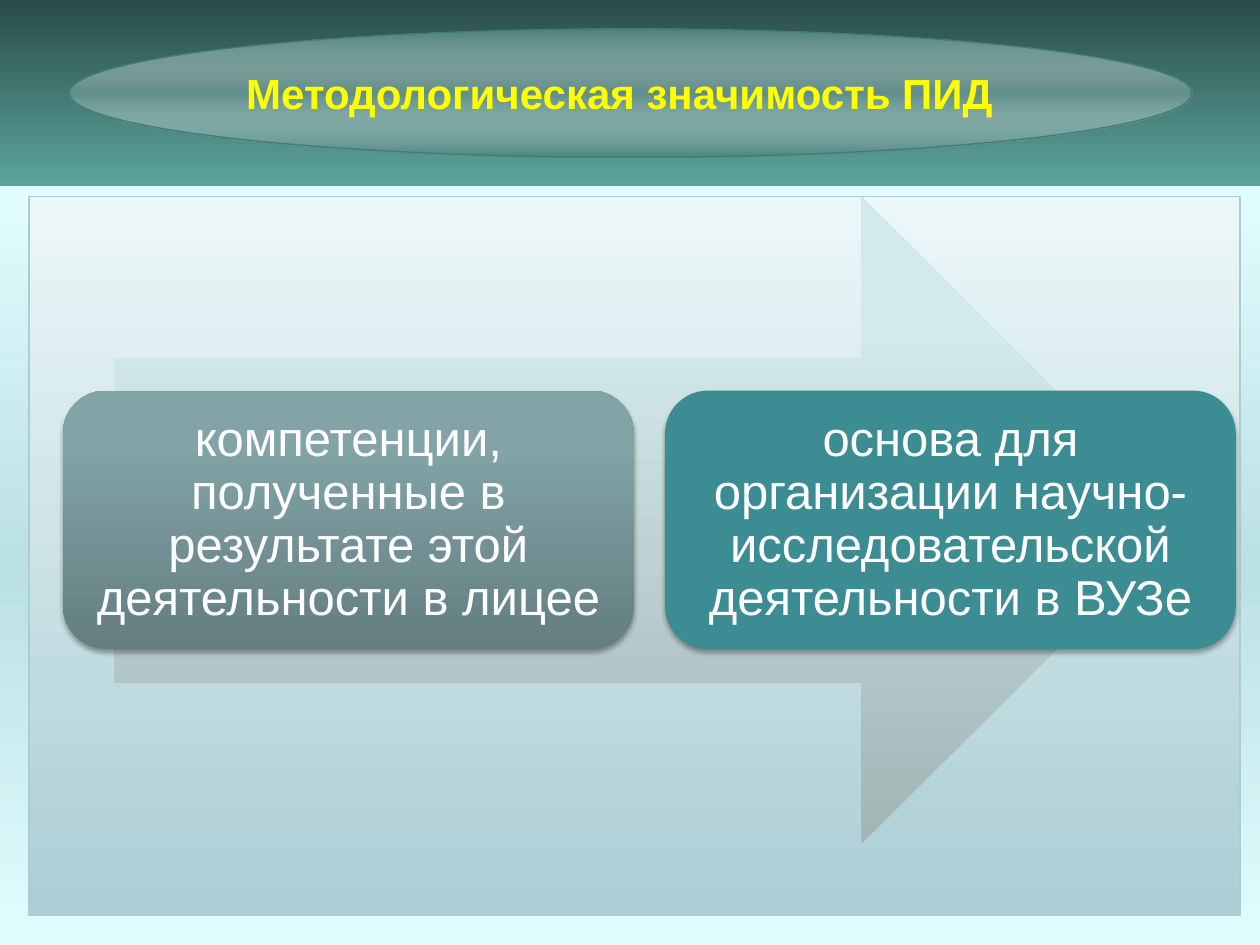
"""Build a slide with a title band, a broad arrow and two cards."""
from typing import NamedTuple, Optional

import pptx
import pptx.dml.color
import pptx.enum.shapes
import pptx.enum.text
import pptx.oxml
import pptx.oxml.ns
import pptx.util

Pt = pptx.util.Pt
Color = pptx.dml.color.RGBColor
Kind = pptx.enum.shapes.MSO_SHAPE
Align = pptx.enum.text.PP_ALIGN
Anchor = pptx.enum.text.MSO_ANCHOR

WHITE = Color(0xFF, 0xFF, 0xFF)
YELLOW = Color(0xFF, 0xFF, 0x00)
PINE = Color(0x2A, 0x4C, 0x49)
JADE = Color(0x5C, 0xA4, 0x9D)
MOSS = Color(0x49, 0x83, 0x7D)
RIM = Color(0x45, 0x7B, 0x76)
ICE = Color(0xE1, 0xFD, 0xFF)
AQUA = Color(0xBB, 0xE0, 0xE3)
MIST = Color(0xEC, 0xF7, 0xF8)
HAZE = Color(0xAB, 0xCE, 0xD5)
ASH = Color(0xA3, 0xB4, 0xB5)
PALE = Color(0xD3, 0xEA, 0xEB)
FROST = Color(0xD4, 0xEB, 0xED)
SLATE = Color(0x64, 0x7E, 0x81)
STEEL = Color(0x82, 0xA4, 0xA7)
CLOUD = Color(0x82, 0xA6, 0xA9)
TEAL = Color(0x3C, 0x8C, 0x93)


class Stop(NamedTuple):
    pos: int
    color: Color
    alpha: int = 100


class Part(NamedTuple):
    kind: Kind
    left: float
    top: float
    width: float
    height: float
    stops: list[Stop]
    angle: int = 90
    line: Optional[Color] = None


class Card(NamedTuple):
    text: str
    stops: list[Stop]


PARTS = [
    Part(Kind.RECTANGLE, 0, 0, 720, 106.5, [Stop(0, PINE), Stop(100, JADE)]),
    Part(Kind.OVAL, 39.6, 16.5, 641.5, 73.4,
         [Stop(0, MOSS), Stop(50, WHITE, 15), Stop(100, MOSS)], line=RIM),
    Part(Kind.RECTANGLE, 0, 106.5, 720, 433.5,
         [Stop(0, ICE), Stop(50, AQUA), Stop(100, ICE)]),
    Part(Kind.RECTANGLE, 16.6, 112.3, 692, 410.7,
         [Stop(0, MIST), Stop(100, HAZE)], line=HAZE),
    Part(Kind.RIGHT_ARROW, 65.2, 112.3, 612, 370,
         [Stop(0, ASH), Stop(80, PALE), Stop(100, FROST)], 270),
]
CARDS = [
    Card("компетенции, полученные в результате этой деятельности в лицее",
         [Stop(0, SLATE), Stop(80, STEEL), Stop(100, CLOUD)]),
    Card("основа для организации научно-исследовательской деятельности в ВУЗе",
         [Stop(0, TEAL)]),
]
CARD_LEFT, CARD_TOP, CARD_WIDTH, CARD_HEIGHT, CARD_STEP = 36, 223.2, 326.2, 147.8, 344


def blend(shape, stops: list[Stop], angle: int) -> None:
    """Fill a shape with a linear gradient."""
    marks = "".join(
        f'<a:gs pos="{stop.pos * 1000}"><a:srgbClr val="{stop.color}">'
        f'<a:alpha val="{stop.alpha * 1000}"/></a:srgbClr></a:gs>'
        for stop in stops)
    shape.fill.gradient()
    old = shape._element.spPr.find(pptx.oxml.ns.qn("a:gradFill"))
    new = pptx.oxml.parse_xml(
        f'<a:gradFill {pptx.oxml.ns.nsdecls("a")} rotWithShape="1">'
        f'<a:gsLst>{marks}</a:gsLst>'
        f'<a:lin ang="{angle * 60000}" scaled="0"/></a:gradFill>')
    old.getparent().replace(old, new)


def draw(slide, part: Part):
    """Draw one filled shape."""
    shape = slide.shapes.add_shape(
        part.kind, Pt(part.left), Pt(part.top), Pt(part.width), Pt(part.height))
    shape.shadow.inherit = False
    if len(part.stops) > 1:
        blend(shape, part.stops, part.angle)
    else:
        shape.fill.solid()
        shape.fill.fore_color.rgb = part.stops[0].color
    if part.line is None:
        shape.line.fill.background()
    else:
        shape.line.color.rgb = part.line
        shape.line.width = Pt(0.75)
    return shape


def shade(shape) -> None:
    """Cast a soft shadow below a shape."""
    effect = shape._element.spPr.find(pptx.oxml.ns.qn("a:effectLst"))
    effect.append(pptx.oxml.parse_xml(
        f'<a:outerShdw {pptx.oxml.ns.nsdecls("a")} blurRad="{Pt(3.1)}" '
        f'dist="{Pt(1.8)}" dir="5400000" rotWithShape="0">'
        '<a:srgbClr val="000000"><a:alpha val="35000"/></a:srgbClr></a:outerShdw>'))


def write(shape, text: str, size: float, color: Color, align: Align,
          bold: bool = False) -> None:
    """Set and format the text of a shape."""
    frame = shape.text_frame
    frame.text = text
    frame.word_wrap = True
    frame.auto_size = pptx.enum.text.MSO_AUTO_SIZE.NONE
    frame.vertical_anchor = Anchor.MIDDLE
    para = frame.paragraphs[0]
    para.alignment = align
    font = para.runs[0].font
    font.name, font.size, font.bold = "Arial", Pt(size), bold
    font.color.rgb = color


def place(slide, card: Card, left: float) -> None:
    """Draw one rounded card with its text."""
    shape = draw(slide, Part(Kind.ROUNDED_RECTANGLE, left, CARD_TOP,
                             CARD_WIDTH, CARD_HEIGHT, card.stops, 270))
    shade(shape)
    write(shape, card.text, 28, WHITE, Align.CENTER)
    frame = shape.text_frame
    frame.margin_left = frame.margin_right = Pt(1.5)
    frame.margin_top = frame.margin_bottom = Pt(1.5)
    frame.paragraphs[0].line_spacing = 0.9


def main() -> None:
    """Build and save the slide."""
    deck = pptx.Presentation()
    deck.slide_width, deck.slide_height = Pt(720), Pt(540)
    slide = deck.slides.add_slide(deck.slide_layouts[5])
    for part in PARTS:
        draw(slide, part)
    for index, card in enumerate(CARDS):
        place(slide, card, CARD_LEFT + index * CARD_STEP)
    title = slide.shapes.title
    title.left, title.top = Pt(133.5), Pt(27.3)
    title.width, title.height = Pt(453.6), Pt(51.9)
    write(title, "Методологическая значимость ПИД", 24, YELLOW, Align.LEFT, True)
    slide.shapes._spTree.append(title._element)
    deck.save("out.pptx")


if __name__ == "__main__":
    main()
